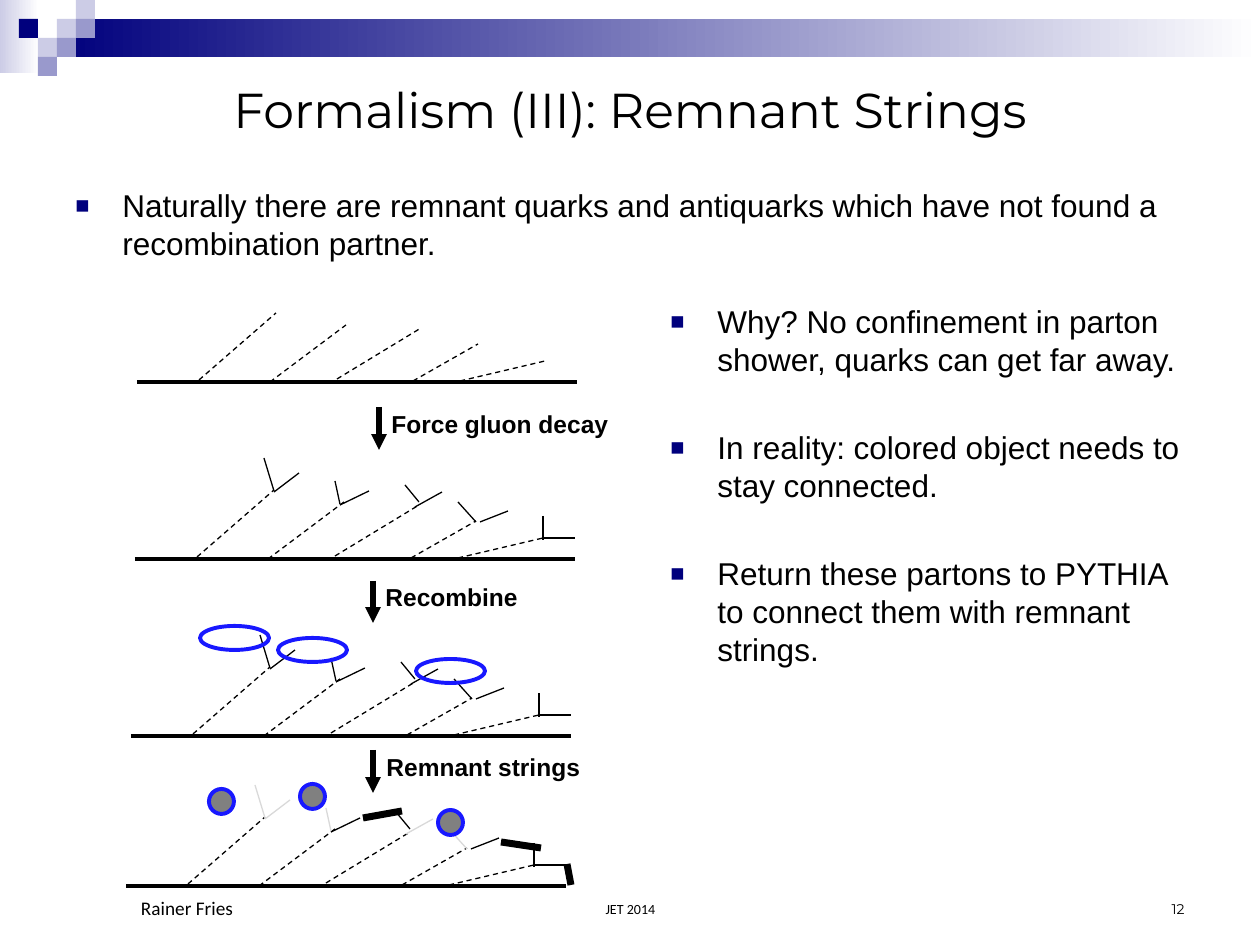
from dataclasses import dataclass
from typing import NamedTuple, Optional

from lxml import etree
from pptx import Presentation
from pptx.dml.color import RGBColor
from pptx.enum.dml import MSO_LINE
from pptx.enum.shapes import MSO_CONNECTOR, MSO_SHAPE
from pptx.enum.text import MSO_ANCHOR, PP_ALIGN
from pptx.oxml.ns import qn
from pptx.util import Pt

RECT, OVAL = MSO_SHAPE.RECTANGLE, MSO_SHAPE.OVAL
STRAIGHT, DASH = MSO_CONNECTOR.STRAIGHT, MSO_LINE.DASH
LEFT, CENTER, RIGHT = PP_ALIGN.LEFT, PP_ALIGN.CENTER, PP_ALIGN.RIGHT
TOP, MIDDLE, BOTTOM = MSO_ANCHOR.TOP, MSO_ANCHOR.MIDDLE, MSO_ANCHOR.BOTTOM


@dataclass(frozen=True)
class Theme:
    ink: str = "000000"
    navy: str = "00007D"
    mid: str = "9999CC"
    pale: str = "CCCCE6"
    white: str = "FFFFFF"
    blue: str = "1818FF"
    gray: str = "808080"
    faded: str = "D9D9D9"
    title: float = 28
    body: float = 18
    label: float = 14
    author: float = 11
    footer: float = 8
    leading: float = 21.7
    bullet_gap: float = 28.6
    thin: float = 0.75
    thick: float = 2.25
    arrow: float = 3
    string: float = 4


class Box(NamedTuple):
    x: int
    y: int
    w: int
    h: int


class Segment(NamedTuple):
    x1: int
    y1: int
    x2: int
    y2: int


class Step(NamedTuple):
    arrow: Segment
    label: Box
    text: str


@dataclass(frozen=True)
class Stage:
    x: int
    y: int
    decayed: bool = True
    faded: tuple[int, ...] = ()
    hadrons: tuple[Box, ...] = ()
    hadron_fill: Optional[str] = None
    strings: tuple[Segment, ...] = ()


T = Theme()


def px(n: int) -> int:
    return round(n * 914400 / 126)


def rgb(color: str) -> RGBColor:
    return RGBColor.from_string(color)


def add_shape(s, kind, box: Box, fill: Optional[str] = None,
              line: Optional[str] = None, fade_to: Optional[str] = None) -> None:
    sp = s.shapes.add_shape(kind, *map(px, box))
    sp.shadow.inherit = False
    if fade_to:
        sp.fill.gradient()
        sp.fill.gradient_angle = 0
        for stop, color in zip(sp.fill.gradient_stops, (fill, fade_to)):
            stop.color.rgb = rgb(color)
    elif fill:
        sp.fill.solid()
        sp.fill.fore_color.rgb = rgb(fill)
    else:
        sp.fill.background()
    if line:
        sp.line.color.rgb = rgb(line)
        sp.line.width = Pt(T.thick)
    else:
        sp.line.fill.background()


def add_line(s, seg: Segment, width: float, color: str = T.ink,
             dashed: bool = False, arrow: bool = False) -> None:
    c = s.shapes.add_connector(STRAIGHT, *map(px, seg))
    c.line.color.rgb = rgb(color)
    c.line.width = Pt(width)
    if dashed:
        c.line.dash_style = DASH
    if arrow:
        etree.SubElement(c.get_or_add_ln(), qn("a:tailEnd"), type="triangle")
    etree.SubElement(c.element.spPr, qn("a:effectLst"))


def add_bullet(p) -> None:
    pPr = p._p.get_or_add_pPr()
    pPr.set("marL", str(px(47)))
    pPr.set("indent", str(-px(47)))
    color = etree.SubElement(pPr, qn("a:buClr"))
    etree.SubElement(color, qn("a:srgbClr"), val=T.navy)
    etree.SubElement(pPr, qn("a:buSzPct"), val="75000")
    etree.SubElement(pPr, qn("a:buFont"), typeface="Arial")
    etree.SubElement(pPr, qn("a:buChar"), char="■")


def add_text(s, box: Box, texts: list[str], size: float, font: str = "Arial",
             align=LEFT, anchor=TOP, bold: bool = False, wrap: bool = True,
             bullets: bool = False, inset: Optional[int] = None) -> None:
    tf = s.shapes.add_textbox(*map(px, box)).text_frame
    tf.word_wrap = wrap
    tf.vertical_anchor = anchor
    if inset is not None:
        tf.margin_left = px(inset)
    for i, text in enumerate(texts):
        p = tf.add_paragraph() if i else tf.paragraphs[0]
        p.alignment = align
        if bullets:
            add_bullet(p)
            p.line_spacing = Pt(T.leading)
            if i:
                p.space_before = Pt(T.bullet_gap)
        r = p.add_run()
        r.text = text
        r.font.size, r.font.name, r.font.bold = Pt(size), font, bold
        r.font.color.rgb = rgb(T.ink)


# Shower geometry, relative to the left end of each baseline
BASELINE = Segment(0, 0, 440, 0)
GLUONS = [Segment(62, -2, 139, -69), Segment(200, -3, 284, -54),
          Segment(133, 0, 209, -57), Segment(323, -1, 408, -21),
          Segment(276, -1, 341, -38)]
QUARKS = [Segment(129, -101, 139, -68), Segment(139, -67, 164, -86),
          Segment(200, -78, 205, -55), Segment(205, -54, 234, -68),
          Segment(270, -74, 284, -57), Segment(280, -52, 307, -67),
          Segment(323, -57, 341, -37), Segment(345, -37, 373, -48),
          Segment(408, -43, 408, -19), Segment(408, -21, 440, -21)]

STAGES = [
    Stage(137, 382, decayed=False),
    Stage(135, 559),
    Stage(131, 736, hadrons=tuple(
        Box(x, y, 69, 24) for x, y in ((200, 626), (416, 659), (278, 638)))),
    Stage(126, 886, faded=(0, 1, 2, 5, 6), hadron_fill=T.gray,
          hadrons=tuple(Box(x, y, 25, 25)
                        for x, y in ((209, 789), (438, 810), (300, 784))),
          strings=(Segment(541, 848, 501, 842), Segment(571, 885, 567, 864),
                   Segment(402, 811, 363, 818))),
]
STEPS = [
    Step(Segment(379, 407, 379, 450), Box(379, 403, 243, 43), "Force gluon decay"),
    Step(Segment(373, 581, 373, 623), Box(373, 576, 159, 43), "Recombine"),
    Step(Segment(373, 750, 373, 793), Box(374, 746, 221, 43), "Remnant strings"),
]


def add_stage(s, stage: Stage) -> None:
    def placed(seg: Segment) -> Segment:
        return Segment(stage.x + seg.x1, stage.y + seg.y1,
                       stage.x + seg.x2, stage.y + seg.y2)

    add_line(s, placed(BASELINE), T.thick)
    for gluon in GLUONS:
        add_line(s, placed(gluon), T.thin, dashed=True)
    for i, quark in enumerate(QUARKS if stage.decayed else []):
        add_line(s, placed(quark), T.thin, T.faded if i in stage.faded else T.ink)
    for hadron in stage.hadrons:
        add_shape(s, OVAL, hadron, stage.hadron_fill, T.blue)
    for string in stage.strings:
        add_line(s, string, T.string)


def main() -> None:
    prs = Presentation()
    prs.slide_width, prs.slide_height = px(1260), px(945)
    s = prs.slides.add_slide(prs.slide_layouts[6])

    # Header bar and checker squares on a 19 px grid
    add_shape(s, RECT, Box(0, 0, 39, 73), T.pale, fade_to=T.white)
    add_shape(s, RECT, Box(57, 19, 1203, 38), T.navy, fade_to=T.white)
    for col, row, color in ((3, 1, T.pale), (4, 0, T.pale), (4, 1, T.mid),
                            (2, 2, T.pale), (1, 1, T.navy), (3, 2, T.mid),
                            (2, 3, T.mid)):
        add_shape(s, RECT, Box(19 * col, 19 * row, 19, 19), color)

    # Title, body and footer
    add_text(s, Box(63, 63, 1134, 92), ["Formalism (III): Remnant Strings"],
             T.title, "Montserrat", CENTER, MIDDLE)
    add_text(s, Box(63, 180, 1134, 670),
             ["Naturally there are remnant quarks and antiquarks which have "
              "not found a recombination partner."], T.body, bullets=True)
    add_text(s, Box(431, 861, 399, 63), ["JET 2014"], T.footer, "Calibri",
             CENTER, BOTTOM)
    add_text(s, Box(903, 861, 294, 63), ["12"], T.footer, "Montserrat",
             RIGHT, BOTTOM)
    add_text(s, Box(63, 861, 294, 65), ["Rainer Fries"], T.author, "Calibri",
             anchor=BOTTOM, inset=78)

    # Shower stages and the steps between them
    for stage in STAGES:
        add_stage(s, stage)
    for step in STEPS:
        add_line(s, step.arrow, T.arrow, arrow=True)
        add_text(s, step.label, [step.text], T.label, bold=True, wrap=False)

    # Explanation
    add_text(s, Box(658, 296, 543, 629),
             ["Why? No confinement in parton shower, quarks can get far away.",
              "In reality: colored object needs to stay connected.",
              "Return these partons to PYTHIA to connect them with remnant strings."],
             T.body, bullets=True)

    prs.save("out.pptx")


if __name__ == "__main__":
    main()
